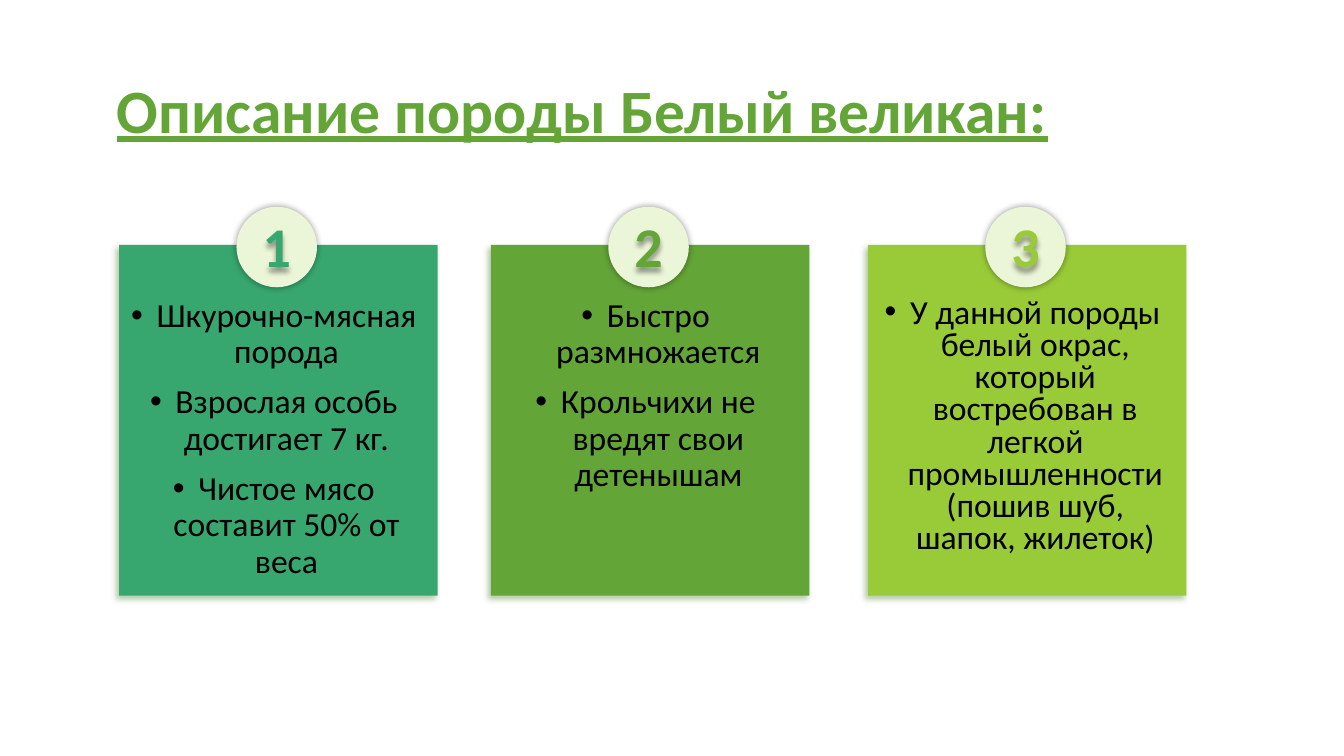
from dataclasses import dataclass

from lxml.etree import SubElement
from pptx import Presentation
from pptx.dml.color import RGBColor
from pptx.enum.shapes import MSO_SHAPE as Preset
from pptx.enum.text import MSO_ANCHOR as Anchor, MSO_AUTO_SIZE as AutoSize, PP_ALIGN as Align
from pptx.oxml.ns import qn
from pptx.util import Cm, Pt


@dataclass(frozen=True)
class Theme:
    """Colours, font and type sizes of the slide."""
    font: str = "Calibri"
    title: str = "63A537"
    text: str = "000000"
    badge: str = "EBF5D7"
    card_shadow: str = "4A7C29"
    badge_shadow: str = "000000"
    title_size: int = 44
    number_size: int = 40
    list_size: int = 24


THEME = Theme()
COMPARISON_LAYOUT = 4
CARD_TOP, CARD_WIDTH, CARD_HEIGHT = 6.17, 8.03, 8.84
BADGE_TOP, BADGE_SIZE = 5.21, 2.03
LIST_TOP, LIST_WIDTH, LIST_HEIGHT = 7.39, 7.8, 7.42
CARDS = [
    (3.0, "37A76F", 0.9, ["Шкурочно-мясная порода",
                          "Взрослая особь достигает 7 кг.",
                          "Чистое мясо составит 50% от веса"]),
    (12.37, "63A537", 0.9, ["Быстро размножается",
                            "Крольчихи не вредят свои детенышам"]),
    (21.87, "99CB38", 0.8, ["У данной породы белый окрас, который востребован "
                            "в легкой промышленности (пошив шуб, шапок, жилеток)"]),
]


def place(shape, left, top, width, height):
    """Move and size a shape, in centimetres."""
    shape.left, shape.top = Cm(left), Cm(top)
    shape.width, shape.height = Cm(width), Cm(height)


def set_font(paragraph, size, color, bold=False):
    """Format all text of a paragraph."""
    font = paragraph.font
    font.name, font.size, font.bold = THEME.font, Pt(size), bold
    font.color.rgb = RGBColor.from_string(color)


def set_shadow(shape, color, blur, distance, angle):
    """Give a shape a soft outer shadow of 40 % opacity."""
    shape.shadow.inherit = False
    effects = shape.element.spPr.find(qn("a:effectLst"))
    shadow = SubElement(effects, qn("a:outerShdw"), blurRad=str(Pt(blur)),
                        dist=str(Pt(distance)), dir=str(angle * 60000),
                        algn="ctr", rotWithShape="0")
    tint = SubElement(shadow, qn("a:srgbClr"), val=color)
    SubElement(tint, qn("a:alpha"), val="40000")


def set_bullet(paragraph):
    """Give a paragraph a hanging round bullet."""
    properties = paragraph._p.get_or_add_pPr()
    properties.set("marL", str(Cm(0.64)))
    properties.set("indent", str(-Cm(0.64)))
    SubElement(properties, qn("a:buFont"), typeface="Arial")
    SubElement(properties, qn("a:buChar"), char="•")


def add_filled(slide, preset, box, color):
    """Add a preset shape with a plain fill and no outline."""
    shape = slide.shapes.add_shape(preset, *map(Cm, box))
    shape.fill.solid()
    shape.fill.fore_color.rgb = RGBColor.from_string(color)
    shape.line.fill.background()
    return shape


def add_badge(slide, center, number, color):
    """Add a numbered circle on the top edge of a card."""
    box = (center - BADGE_SIZE / 2, BADGE_TOP, BADGE_SIZE, BADGE_SIZE)
    circle = add_filled(slide, Preset.OVAL, box, THEME.badge)
    set_shadow(circle, THEME.badge_shadow, 5, 0, 0)
    label = slide.shapes.add_textbox(*map(Cm, box))
    label.height = Cm(1.96)
    set_shadow(label, THEME.badge_shadow, 4, 3, 90)
    frame = label.text_frame
    frame.word_wrap, frame.auto_size = True, AutoSize.SHAPE_TO_FIT_TEXT
    paragraph = frame.paragraphs[0]
    paragraph.text, paragraph.alignment = str(number), Align.CENTER
    set_font(paragraph, THEME.number_size, color, bold=True)


def fill_list(body, items, line_spacing):
    """Write centred bullet points into a body placeholder."""
    frame = body.text_frame
    frame.text = "\n".join(items)
    frame.auto_size, frame.vertical_anchor = AutoSize.NONE, Anchor.TOP
    for index, paragraph in enumerate(frame.paragraphs):
        paragraph.alignment = Align.CENTER
        paragraph.line_spacing = line_spacing
        paragraph.space_before = Pt(10 if index else 0)
        set_bullet(paragraph)
        set_font(paragraph, THEME.list_size, THEME.text)


def add_card(slide, body, number, left, color, line_spacing, items):
    """Add a coloured card with its list and number."""
    card = add_filled(slide, Preset.RECTANGLE,
                      (left, CARD_TOP, CARD_WIDTH, CARD_HEIGHT), color)
    set_shadow(card, THEME.card_shadow, 4, 3, 135)
    place(body, left, LIST_TOP, LIST_WIDTH, LIST_HEIGHT)
    fill_list(body, items, line_spacing)
    card.element.addnext(body.element)
    add_badge(slide, left + CARD_WIDTH / 2 - 0.04, number, color)


def fill_title(title, text):
    """Write the underlined slide title."""
    place(title, 2.33, 1.01, 29.21, 3.68)
    frame = title.text_frame
    frame.text = text
    frame.auto_size, frame.vertical_anchor = AutoSize.NONE, Anchor.MIDDLE
    frame.margin_left = Cm(0.61)
    paragraph = frame.paragraphs[0]
    paragraph.alignment, paragraph.line_spacing = Align.LEFT, 0.9
    set_font(paragraph, THEME.title_size, THEME.title, bold=True)
    paragraph.font.underline = True


def main():
    """Build the slide and save it."""
    presentation = Presentation()
    presentation.slide_width, presentation.slide_height = Cm(33.87), Cm(19.05)
    slide = presentation.slides.add_slide(presentation.slide_layouts[COMPARISON_LAYOUT])
    title, *bodies, unused = slide.placeholders
    unused.element.getparent().remove(unused.element)
    fill_title(title, "Описание породы Белый великан:")
    for number, (body, card) in enumerate(zip(bodies, CARDS), start=1):
        add_card(slide, body, number, *card)
    presentation.save("out.pptx")


if __name__ == "__main__":
    main()
